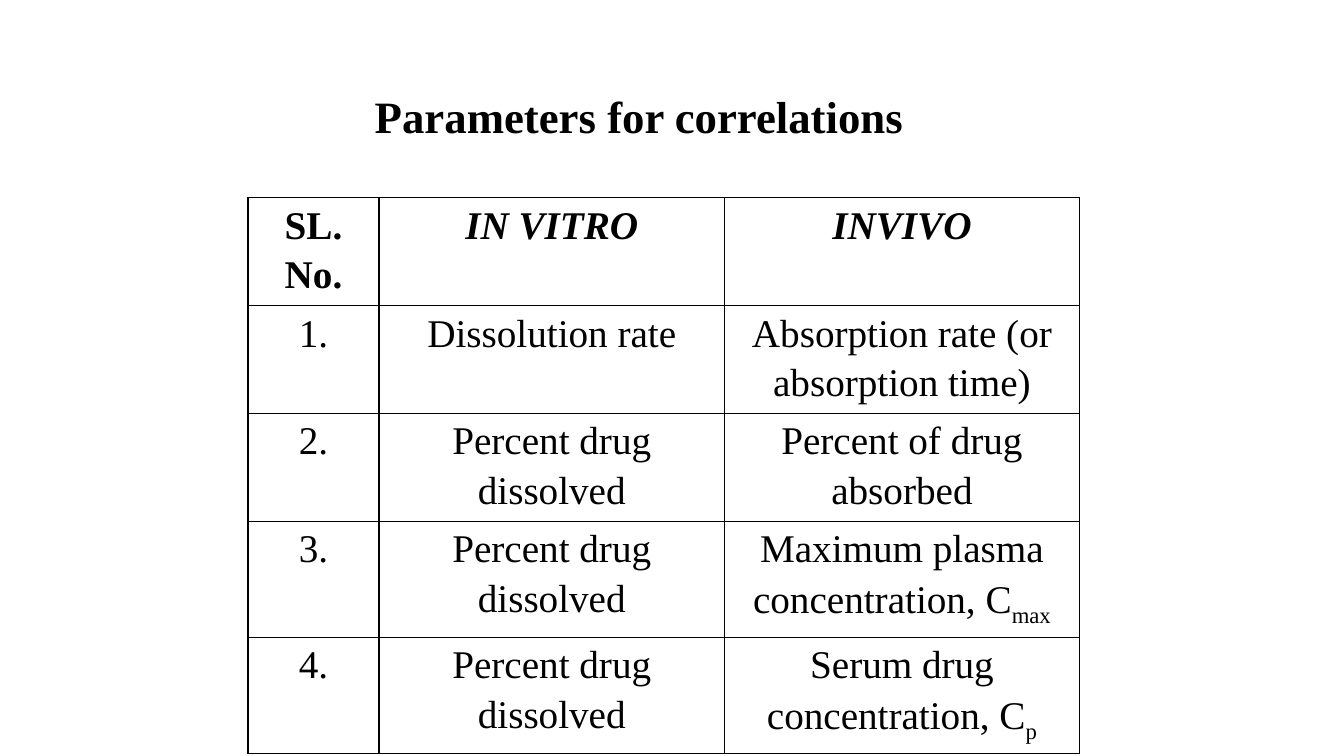
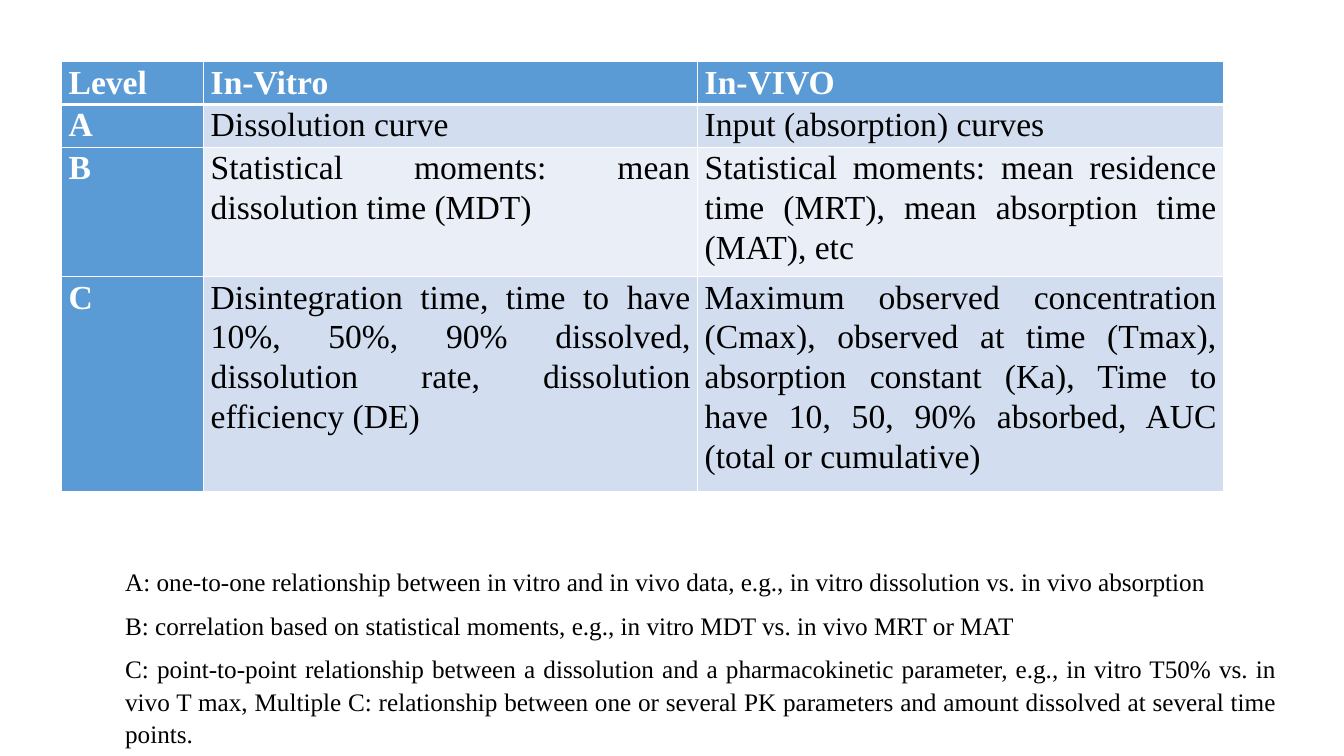
from pptx import Presentation
from pptx.dml.color import RGBColor
from pptx.enum import text
from pptx.oxml import ns
from pptx.util import Cm, Pt
from lxml import etree

COLORS = {
    "ink": "000000",
    "paper": "FFFFFF",
    "accent": "5B9BD5",
    "band_dark": "D2DEEF",
    "band_light": "EAEFF7",
}
FONT = "Times New Roman"
CELL_INSET = Cm(0.18)
TITLE_ONLY, TITLE_AND_CONTENT = 5, 1

PARAMETERS = [
    ["SL. No.", "IN VITRO", "INVIVO"],
    ["1.", "Dissolution rate", "Absorption rate (or absorption time)"],
    ["2.", "Percent drug dissolved", "Percent of drug absorbed"],
    ["3.", "Percent drug dissolved", ("Maximum plasma concentration, C", "max")],
    ["4.", "Percent drug dissolved", ("Serum drug concentration, C", "p")],
]
LEVELS = [
    ["Level", "In-Vitro", "In-VIVO"],
    ["A", "Dissolution curve", "Input (absorption) curves"],
    ["B", "Statistical moments: mean dissolution time (MDT)",
     "Statistical moments: mean residence time (MRT), mean absorption time (MAT), etc"],
    ["C", "Disintegration time, time to have 10%, 50%, 90% dissolved, "
          "dissolution rate, dissolution efficiency (DE)",
     "Maximum observed concentration (Cmax), observed at time (Tmax), "
     "absorption constant (Ka), Time to have 10, 50, 90% absorbed, "
     "AUC (total or cumulative)"],
]
LEVEL_NOTES = [
    "A: one-to-one relationship between in vitro and in vivo data, e.g., "
    "in vitro dissolution vs. in vivo absorption",
    "B: correlation based on statistical moments, e.g., in vitro MDT vs. in vivo MRT or MAT",
    "C: point-to-point relationship between a dissolution and a pharmacokinetic "
    "parameter, e.g., in vitro T50% vs. in vivo T max, Multiple C: relationship "
    "between one or several PK parameters and amount dissolved at several time points.",
]


def rgb(name):
    return RGBColor.from_string(COLORS[name])


def style_paragraph(paragraph, size, align, spacing, color="ink", bold=False, italic=False):
    paragraph.alignment = align
    paragraph.line_spacing = spacing
    font = paragraph.font
    font.name, font.size = FONT, Pt(size)
    font.bold, font.italic = bold, italic
    font.color.rgb = rgb(color)


def place(shape, left, top, width, height):
    shape.left, shape.top = Cm(left), Cm(top)
    shape.width, shape.height = Cm(width), Cm(height)


def set_border(cell, side, color, points):
    line = etree.SubElement(cell._tc.get_or_add_tcPr(), ns.qn(f"a:ln{side}"), w=str(Pt(points)))
    fill = etree.SubElement(line, ns.qn("a:solidFill"))
    etree.SubElement(fill, ns.qn("a:srgbClr"), val=COLORS[color])


def write_cell(paragraph, content):
    base, subscript = content if isinstance(content, tuple) else (content, "")
    paragraph.add_run().text = base
    if subscript:
        run = paragraph.add_run()
        run.text = subscript
        run._r.get_or_add_rPr().set("baseline", "-25000")


def parameter_look(row, column):
    return "paper", {"bold": row == 0, "italic": row == 0 and column > 0}


def level_look(row, column):
    if row == 0 or column == 0:
        return "accent", {"color": "paper", "bold": True}
    return ("band_dark" if row % 2 else "band_light"), {}


def add_grid(slide, left, top, widths, heights, content, look, border, rule, **type_style):
    grid = slide.shapes.add_table(len(heights), len(widths), Cm(left), Cm(top),
                                  Cm(sum(widths)), Cm(sum(heights))).table
    for column, width in zip(grid.columns, widths):
        column.width = Cm(width)
    for r, (height, values) in enumerate(zip(heights, content)):
        grid.rows[r].height = Cm(height)
        for c, value in enumerate(values):
            cell = grid.cell(r, c)
            cell.margin_left = cell.margin_right = CELL_INSET
            cell.margin_top = cell.margin_bottom = 0
            for side in "LRTB":
                under_header = (r, side) in ((0, "B"), (1, "T"))
                set_border(cell, side, border, rule if under_header else 1)
            fill, emphasis = look(r, c)
            cell.fill.solid()
            cell.fill.fore_color.rgb = rgb(fill)
            paragraph = cell.text_frame.paragraphs[0]
            write_cell(paragraph, value)
            style_paragraph(paragraph, **type_style, **emphasis)


def add_title(slide, wording):
    title = slide.shapes.title
    place(title, 9.19, 2.1, 14.5, 1.62)
    title.text_frame.text = wording
    title.text_frame.auto_size = text.MSO_AUTO_SIZE.NONE
    style_paragraph(title.text_frame.paragraphs[0], 32, text.PP_ALIGN.LEFT, 1.0, bold=True)


def add_notes_list(slide, notes):
    body = slide.placeholders[1]
    place(body, 2.9, 14.1, 29.54, 4.95)
    frame = body.text_frame
    frame.text = "\n".join(notes)
    frame.auto_size = text.MSO_AUTO_SIZE.NONE
    for paragraph in frame.paragraphs:
        style_paragraph(paragraph, 18, text.PP_ALIGN.JUSTIFY, 1.07)
        paragraph.space_before, paragraph.space_after = Pt(0), Pt(8)
        properties = paragraph._p.get_or_add_pPr()
        properties.set("marL", "0")
        properties.set("indent", "0")
        bullet = properties.makeelement(ns.qn("a:buNone"), {})
        properties.find(ns.qn("a:spcAft")).addnext(bullet)


def build_parameters(deck):
    slide = deck.slides.add_slide(deck.slide_layouts[TITLE_ONLY])
    add_title(slide, "Parameters for correlations")
    add_grid(slide, 6.25, 4.98, [3.3, 8.71, 8.94], [2.72] * 3 + [2.92] * 2,
             PARAMETERS, parameter_look, "ink", 1,
             size=28, align=text.PP_ALIGN.CENTER, spacing=1.15)


def build_levels(deck):
    slide = deck.slides.add_slide(deck.slide_layouts[TITLE_AND_CONTENT])
    unused_title = slide.shapes.title.element
    unused_title.getparent().remove(unused_title)
    add_grid(slide, 1.55, 1.55, [3.58, 12.45, 13.26], [1.08, 1.08, 3.26, 5.42],
             LEVELS, level_look, "paper", 3,
             size=24, align=text.PP_ALIGN.JUSTIFY, spacing=1.07)
    add_notes_list(slide, LEVEL_NOTES)


def main():
    deck = Presentation()
    deck.slide_width, deck.slide_height = Cm(33.87), Cm(19.05)
    build_parameters(deck)
    build_levels(deck)
    deck.save("out.pptx")


if __name__ == "__main__":
    main()
